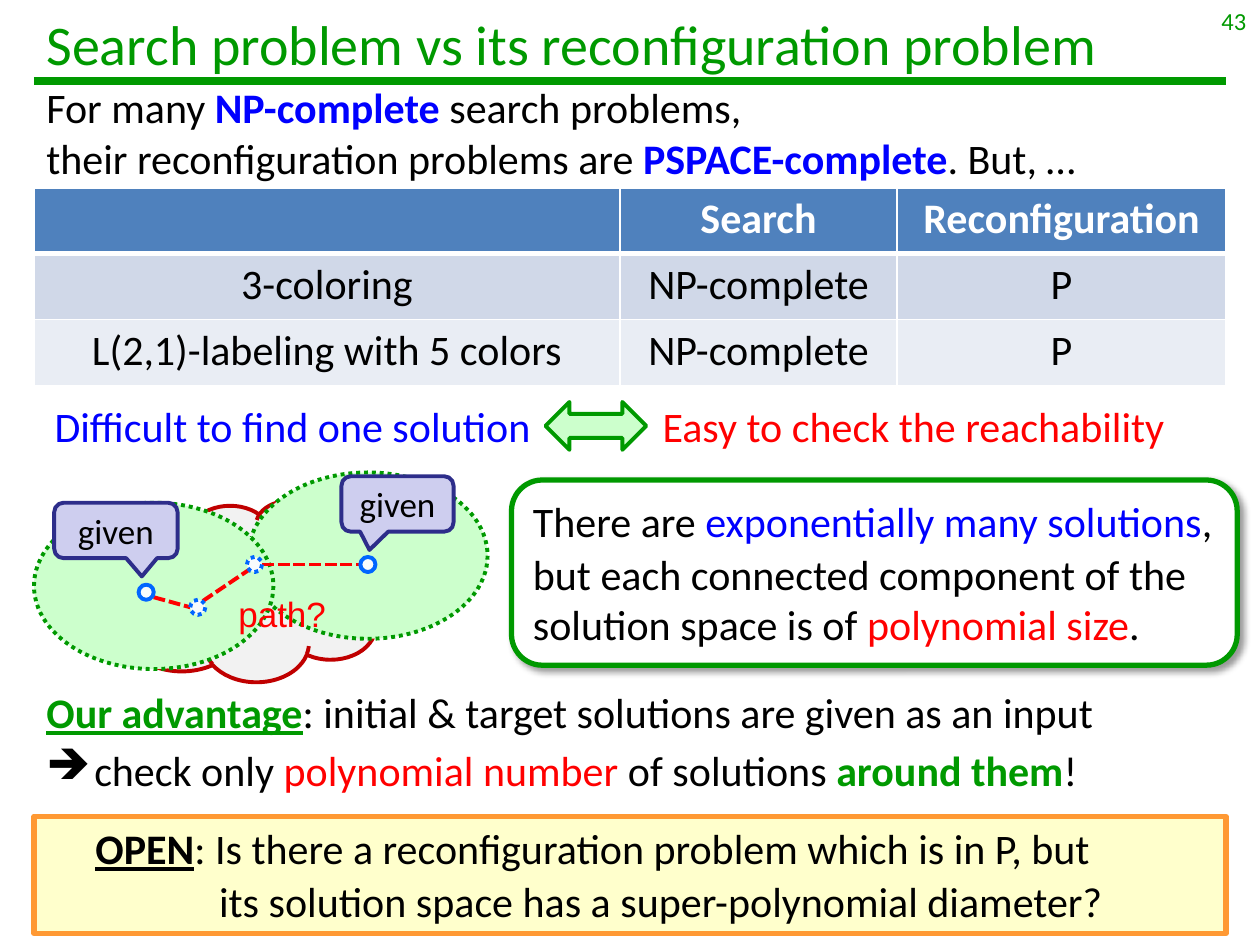
import pptx
import pptx.util
import pptx.dml.color
import pptx.enum.dml
import pptx.enum.shapes
import pptx.enum.text
import pptx.oxml
import pptx.oxml.ns
from lxml import etree

SHAPE = pptx.enum.shapes.MSO_SHAPE
ALIGN = pptx.enum.text.PP_ALIGN
ANCHOR = pptx.enum.text.MSO_ANCHOR
DOT = pptx.enum.dml.MSO_LINE.ROUND_DOT
DASH = pptx.enum.dml.MSO_LINE.SQUARE_DOT
GREEN, MINT, RED, BLUE, BLACK, WHITE = "009900", "CCFFCC", "FF0000", "0000FF", "000000", "FFFFFF"
COLS, ROWS = 100, 75


def u(n):
    """Turn grid units of a tenth of an inch into a length."""
    return pptx.util.Inches(n / 10)


def rgb(color):
    """Turn a hex string into a colour."""
    return pptx.dml.color.RGBColor.from_string(color)


def within(box, part):
    """Shift a part by the corner of its box."""
    return (box[0] + part[0], box[1] + part[1], *part[2:])


def write(tf, paras, size=24, font="Calibri", color=BLACK, bold=False, align=ALIGN.LEFT,
          before=1.2, anchor=None, indents=(), bullet=None):
    """Fill a text frame with paragraphs of plain or formatted runs."""
    if anchor is not None:
        tf.vertical_anchor = anchor
    for i, runs in enumerate(paras):
        p = tf.paragraphs[0] if i == 0 else tf.add_paragraph()
        p.alignment, p.space_before = align, pptx.util.Pt(before)
        pPr = p._p.get_or_add_pPr()
        if indents:
            margin, first = indents[i]
            pPr.set("marL", str(u(margin)))
            pPr.set("indent", str(u(first)))
        if bullet:
            etree.SubElement(pPr, pptx.oxml.ns.qn("a:buChar")).set("char", bullet)
        for run in runs:
            text, fmt = (run, {}) if isinstance(run, str) else run
            r = p.add_run()
            r.text, r.font.name, r.font.size = text, font, pptx.util.Pt(size)
            r.font.bold = fmt.get("bold", bold)
            r.font.underline = fmt.get("underline", False)
            r.font.color.rgb = rgb(fmt.get("color", color))


def text_box(s, box, paras, wrap=True, **fmt):
    """Add a text box."""
    tf = s.shapes.add_textbox(*map(u, box)).text_frame
    tf.word_wrap = wrap
    write(tf, paras, **fmt)


def outline(line, color, width, dash=None):
    """Style the line of a shape or connector."""
    line.color.rgb, line.width = rgb(color), pptx.util.Pt(width)
    if dash is not None:
        line.dash_style = dash


def shape(s, kind, box, fill, color, width=2.25, dash=None, adjust=()):
    """Add a preset shape without a shadow."""
    sp = s.shapes.add_shape(kind, *map(u, box))
    sp.shadow.inherit = False
    sp.fill.solid()
    sp.fill.fore_color.rgb = rgb(fill)
    outline(sp.line, color, width, dash)
    for i, value in enumerate(adjust):
        sp.adjustments[i] = value
    return sp


def straight(s, start, end, color, width, dash=None):
    """Add a straight connector without a shadow."""
    c = s.shapes.add_connector(pptx.enum.shapes.MSO_CONNECTOR.STRAIGHT, *map(u, start + end))
    outline(c.line, color, width, dash)
    etree.SubElement(c._element.spPr, pptx.oxml.ns.qn("a:effectLst"))


def heading(s, box):
    """Place the title, its rule and the page number."""
    x, y, w, h = box
    straight(s, (x, y + 6.4), (x + w, y + 6.4), GREEN, 4.5)
    text_box(s, (x, y, w, h), [["Search problem vs its reconfiguration problem"]],
             size=32, color=GREEN, anchor=ANCHOR.MIDDLE, before=0)
    text_box(s, (COLS - 23.4, y, 23.3, 5.2), [["43"]], size=14, color=GREEN,
             align=ALIGN.RIGHT, before=0)


def border(cell, sides):
    """Draw white cell borders of the given widths."""
    for side, width in sides.items():
        cell._tc.get_or_add_tcPr().append(pptx.oxml.parse_xml(
            f'<a:ln{side} {pptx.oxml.ns.nsdecls("a")} w="{pptx.util.Pt(width)}"><a:solidFill>'
            f'<a:srgbClr val="{WHITE}"/></a:solidFill></a:ln{side}>'))


def complexity_table(s, box):
    """Place the table of search and reconfiguration complexity."""
    rows = [["", "Search", "Reconfiguration"],
            ["3-coloring", "NP-complete", "P"],
            ["L(2,1)-labeling with 5 colors", "NP-complete", "P"]]
    table = s.shapes.add_table(3, 3, *map(u, box)).table
    for column, width in zip(table.columns, (46.5, 22, 26.1)):
        column.width = u(width)
    for i, (row, fill) in enumerate(zip(rows, ("4F81BD", "D0D8E8", "E9EDF4"))):
        table.rows[i].height = u(box[3] / 3)
        for j, text in enumerate(row):
            cell = table.cell(i, j)
            border(cell, {"L": 1, "R": 1, "T": 3 if i == 1 else 1, "B": 3 if i == 0 else 1})
            cell.fill.solid()
            cell.fill.fore_color.rgb = rgb(fill)
            if text:
                write(cell.text_frame, [[text]], color=BLACK if i else WHITE,
                      bold=i == 0, align=ALIGN.CENTER)


def contrast(s, box):
    """Place the two opposed statements and the arrow between them."""
    text_box(s, within(box, (0, 0, 40.3, 5)), [["Difficult to find one solution "]],
             color=BLUE, align=ALIGN.RIGHT)
    text_box(s, within(box, (48.8, 0, 42.5, 5)), [["Easy to check the reachability"]], color=RED)
    shape(s, SHAPE.LEFT_RIGHT_ARROW, within(box, (40.5, 0.6, 8, 3.8)), MINT, GREEN)


def solution_space(s, box):
    """Place the solution space with the path between two given solutions."""
    shape(s, SHAPE.CLOUD, within(box, (4, 2.2, 26.7, 14.4)), "F2F2F2", "C00000")
    for corner in ((17, 0), (0, 2.4)):
        shape(s, SHAPE.OVAL, within(box, corner + (19, 13.2)), MINT, GREEN, dash=DOT)
    text_box(s, within(box, (14.9, 9, 9.6, 4.4)), [["path?"]], wrap=False, size=20,
             font="Arial", color=RED, align=ALIGN.CENTER)
    for start, end in (((9.5, 9.9), (12.4, 10.7)), ((13.4, 10.2), (17.1, 7.7)),
                       ((18.1, 7.3), (25.8, 7.3))):
        straight(s, within(box, start), within(box, end), RED, 2.25, DASH)
    for corner, dash in (((8.3, 8.9), None), ((12.4, 10.1), DOT),
                         ((16.9, 6.7), DOT), ((25.9, 6.7), None)):
        shape(s, SHAPE.OVAL, within(box, corner + (1.2, 1.2)), "F8FBFC", "0066FF", dash=dash)
    for part, adjust in (((1.6, 2.4, 9.8, 4.4), (0.21, 0.83, 0.17)),
                         ((24.4, 0.3, 8.9, 4.4), (-0.25, 0.83, 0.17))):
        sp = shape(s, SHAPE.ROUNDED_RECTANGULAR_CALLOUT, within(box, part), "CECEEF", "2D2D8A",
                   adjust=adjust)
        write(sp.text_frame, [["given"]], size=20, align=ALIGN.CENTER, anchor=ANCHOR.MIDDLE)


def size_note(s, box):
    """Place the shadowed note on the size of the components."""
    sp = shape(s, SHAPE.ROUNDED_RECTANGLE, box, WHITE, GREEN, 3)
    pt = pptx.util.Pt
    sp._element.spPr.find(pptx.oxml.ns.qn("a:effectLst")).append(pptx.oxml.parse_xml(
        f'<a:outerShdw {pptx.oxml.ns.nsdecls("a")} blurRad="{pt(4)}" dist="{pt(3)}" dir="2700000" '
        f'algn="tl" rotWithShape="0"><a:srgbClr val="{BLACK}"><a:alpha val="40000"/></a:srgbClr>'
        '</a:outerShdw>'))
    sp.text_frame.word_wrap = True
    write(sp.text_frame, [
        ["There are ", ("exponentially many solutions", {"color": BLUE}), ","],
        ["but each connected component of the solution space is of ",
         ("polynomial size", {"color": RED}), "."]], anchor=ANCHOR.MIDDLE)


def advantage(s, box):
    """Place the advantage and what follows from it."""
    x, y, w, h = box
    strong = {"color": GREEN, "bold": True}
    text_box(s, (x, y, w, h / 2), [[("Our advantage", {**strong, "underline": True}),
                                    ": initial & target solutions are given as an input"]])
    text_box(s, (x, y + 4.6, w, h / 2), [[
        "check only ", ("polynomial number", {"color": RED}), " of solutions ",
        ("around them", strong), "!"]], indents=[(3.8, -3.8)], bullet="➔")


def open_question(s, box):
    """Place the framed open question."""
    sp = shape(s, SHAPE.RECTANGLE, box, "FFFFCC", "FF9933", 3)
    sp.text_frame.word_wrap = True
    write(sp.text_frame, [
        [("OPEN", {"bold": True, "underline": True}),
         ": Is there a reconfiguration problem which is in P, but"],
        ["its solution space has a super-polynomial diameter?"]],
        anchor=ANCHOR.TOP, indents=[(9.3, -5.4), (13.7, 0)])


def main():
    """Build the slide and save it."""
    prs = pptx.Presentation()
    prs.slide_width, prs.slide_height = u(COLS), u(ROWS)
    s = prs.slides.add_slide(prs.slide_layouts[6])
    left, width = 2.7, 94.6
    key = {"color": BLUE, "bold": True}
    heading(s, (left, 0, width, 6.9))
    text_box(s, (left, 6, width, 9.1), [
        ["For many ", ("NP-complete ", key), "search problems,"],
        ["their reconfiguration problems are ", ("PSPACE-complete", key), ". But, …"]], before=0)
    complexity_table(s, (left, 14.9, width, 15.7))
    contrast(s, (2.8, 31.3, 91.3, 5))
    solution_space(s, (left, 37.5, 36, 16.6))
    size_note(s, (40.6, 38.1, 57.6, 14.7))
    advantage(s, (left, 54, width, 10))
    open_question(s, (left, 64.8, width, 9.3))
    prs.save("out.pptx")


if __name__ == "__main__":
    main()
